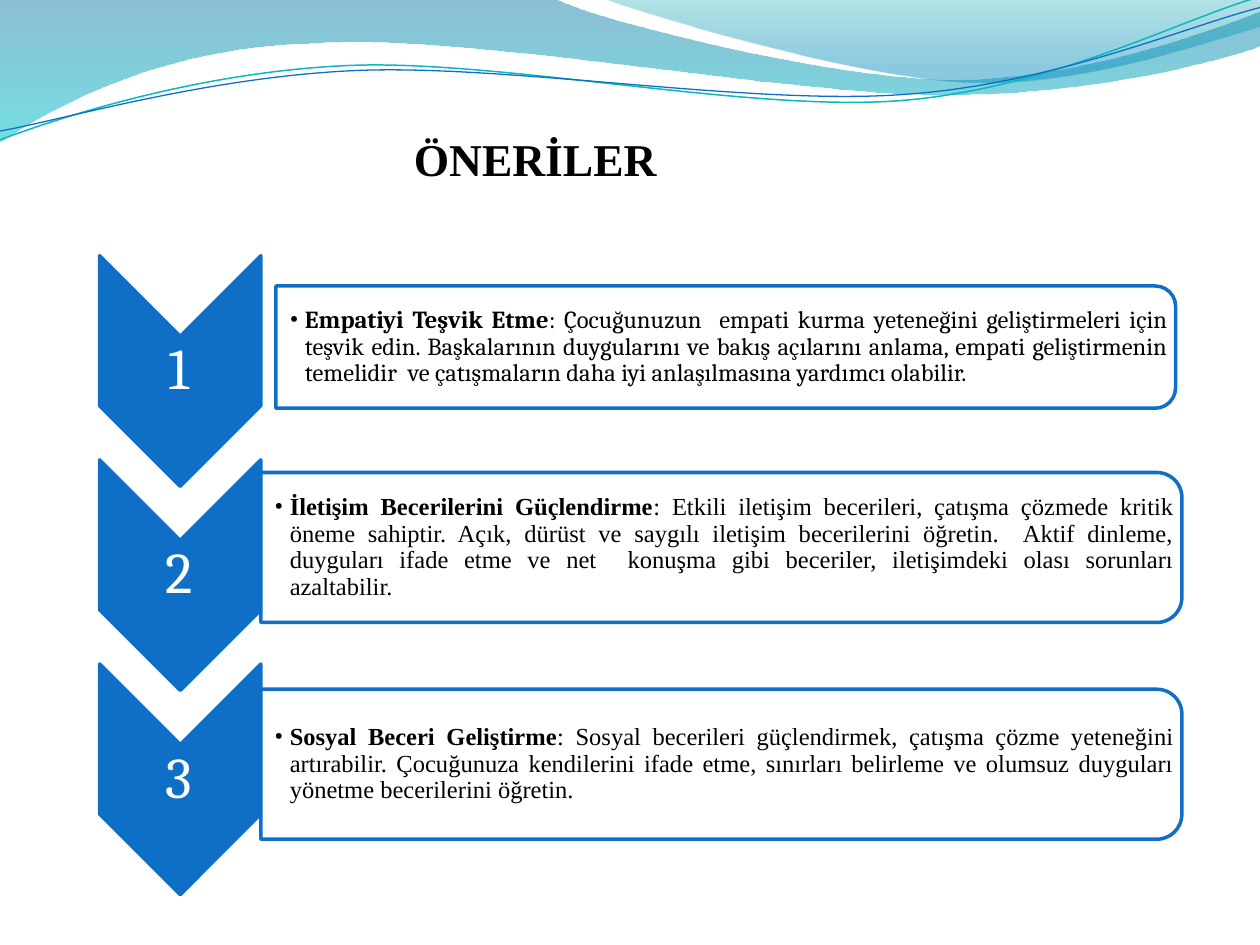
import math
from dataclasses import dataclass

from lxml import etree
from pptx import Presentation
from pptx.dml.color import RGBColor
from pptx.enum import shapes, text
from pptx.oxml.ns import qn
from pptx.util import Inches, Pt


@dataclass(frozen=True)
class Theme:
    blue: str = "0F6FC6"
    teal: str = "0AB8BF"
    white: str = "FFFFFF"
    black: str = "000000"
    serif: str = "Times New Roman"
    heading: str = "Cambria"
    title_size: float = 26
    number_size: float = 33
    body_size: float = 14
    outline: float = 2


THEME = Theme()
ROW_PITCH = 1.62
CURVE_TILT = 357.3

WAVE_BACK = [
    (0, 0), (4.4, -0.01),
    (4.76, 0.17, 6.64, 0.63, 7.58, 0.63),
    (8.53, 0.63, 9.58, 0.26, 10, 0.09), (10.01, 0.36),
    (9.83, 0.44, 8.7, 0.76, 7.46, 0.75),
    (6.22, 0.75, 3.82, 0.28, 2.57, 0.34),
    (1.29, 0.36, 0.46, 0.83, -0.01, 1.13), (0, 0),
]
WAVE_FRONT = [
    (4.79, -0.01),
    (5.09, 0.11, 6.82, 0.62, 7.69, 0.65),
    (8.56, 0.69, 9.61, 0.32, 10, 0.21), (10, 0), (4.79, -0.01),
]
TEAL_LINE = [
    (0, 1.11),
    (0.48, 0.93, 1.58, 0.57, 2.77, 0.52),
    (3.95, 0.47, 5.93, 0.89, 7.13, 0.8),
    (8.33, 0.71, 9.38, 0.15, 9.98, -0.02),
]
BLUE_LINE = [
    (0, 1.04),
    (0.47, 0.96, 1.64, 0.61, 2.83, 0.56),
    (4.03, 0.51, 5.97, 0.84, 7.17, 0.75),
    (8.36, 0.67, 9.41, 0.21, 10, 0.06),
]
ROWS = [
    ((2.19, 2.27, 7.14, 0.97), THEME.heading, "Empatiyi Teşvik Etme",
     ": Çocuğunuzun  empati kurma yeteneğini geliştirmeleri için teşvik edin. "
     "Başkalarının duygularını ve bakış açılarını anlama, empati geliştirmenin "
     "temelidir  ve çatışmaların daha iyi anlaşılmasına yardımcı olabilir."),
    ((2.07, 3.75, 7.31, 1.19), THEME.serif, "İletişim Becerilerini Güçlendirme",
     ": Etkili iletişim becerileri, çatışma çözmede kritik öneme sahiptir. "
     "Açık, dürüst ve saygılı iletişim becerilerini öğretin.  Aktif dinleme, "
     "duyguları ifade etme ve net  konuşma gibi beceriler, iletişimdeki olası "
     "sorunları azaltabilir."),
    ((2.07, 5.47, 7.31, 1.19), THEME.serif, "Sosyal Beceri Geliştirme",
     ": Sosyal becerileri güçlendirmek, çatışma çözme yeteneğini artırabilir. "
     "Çocuğunuza kendilerini ifade etme, sınırları belirleme ve olumsuz "
     "duyguları yönetme becerilerini öğretin."),
]


def rgb(value):
    return RGBColor.from_string(value)


def set_alpha(fill_element, percents):
    for color, percent in zip(fill_element.iter(qn("a:srgbClr")), percents):
        etree.SubElement(color, qn("a:alpha"), val=str(percent * 1000))


def turn(points, degrees, center):
    cx, cy = center
    cos, sin = math.cos(math.radians(degrees)), math.sin(math.radians(degrees))
    return [(cx + (x - cx) * cos - (y - cy) * sin,
             cy + (x - cx) * sin + (y - cy) * cos) for x, y in points]


def add_outline(s, segments, close, tilt=0, center=(0, 0)):
    curves = [[(Inches(x), Inches(y)) for x, y in
               turn(list(zip(seg[::2], seg[1::2])), -tilt, center)] for seg in segments]
    ends = [points[-1] for points in curves]
    builder = s.shapes.build_freeform(*ends[0])
    builder.add_line_segments(ends[1:], close=close)
    sp = builder.convert_to_shape()
    sp.shadow.inherit = False
    for line, points in zip(list(sp.element.iter(qn("a:lnTo"))), curves[1:]):
        if len(points) == 3:
            bezier = etree.Element(qn("a:cubicBezTo"))
            for x, y in points:
                etree.SubElement(bezier, qn("a:pt"), x=str(x - sp.left), y=str(y - sp.top))
            line.getparent().replace(line, bezier)
    sp.rotation = tilt
    return sp


def add_wave(s, segments, stops):
    sp = add_outline(s, segments, True)
    sp.line.fill.background()
    sp.fill.gradient()
    sp.fill.gradient_angle = 270
    for stop, (position, color, _) in zip(sp.fill.gradient_stops, stops):
        stop.position = position
        stop.color.rgb = rgb(color)
    set_alpha(sp.element.spPr.find(qn("a:gradFill")), [alpha for _, _, alpha in stops])


def add_curve(s, segments, center, color, width):
    sp = add_outline(s, segments, False, CURVE_TILT, center)
    sp.fill.background()
    sp.line.color.rgb = rgb(color)
    sp.line.width = Pt(width)


def add_turned_shape(s, kind, rect, fill):
    left, top, width, height = rect
    shift = (width - height) / 2
    sp = s.shapes.add_shape(kind, Inches(left + shift), Inches(top - shift),
                            Inches(height), Inches(width))
    sp.rotation = 90
    sp.shadow.inherit = False
    sp.fill.solid()
    sp.fill.fore_color.rgb = rgb(fill)
    sp.line.color.rgb = rgb(THEME.blue)
    sp.line.width = Pt(THEME.outline)
    return sp


def add_text(s, rect, runs, font, size, color, align, insets,
             anchor=text.MSO_ANCHOR.MIDDLE, spacing=0.9):
    tf = s.shapes.add_textbox(*map(Inches, rect)).text_frame
    tf.word_wrap = True
    tf.vertical_anchor = anchor
    tf.margin_left, tf.margin_top, tf.margin_right, tf.margin_bottom = map(Inches, insets)
    p = tf.paragraphs[0]
    p.alignment = align
    p.line_spacing = spacing
    p.font.name = font
    p.font.size = Pt(size)
    p.font.color.rgb = rgb(color)
    for content, bold in runs:
        r = p.add_run()
        r.text = content
        r.font.bold = bold
    return p


def add_bullet(p, font):
    p.level = 1
    pPr = p._p.get_or_add_pPr()
    pPr.set("marL", str(Inches(0.12)))
    pPr.set("indent", str(-Inches(0.12)))
    defaults = pPr.find(qn("a:defRPr"))
    defaults.addprevious(etree.Element(qn("a:buFont"), typeface=font))
    defaults.addprevious(etree.Element(qn("a:buChar"), char="•"))


def add_step(s, index, box, font, heading, body):
    drop = index * ROW_PITCH
    add_turned_shape(s, shapes.MSO_SHAPE.CHEVRON, (0.79, 2.03 + drop, 1.28, 1.83), THEME.blue)
    add_text(s, (0.78, 2.67 + drop, 1.28, 0.55), [(str(index + 1), False)],
             THEME.heading, THEME.number_size, THEME.white,
             text.PP_ALIGN.CENTER, [0.02] * 4)

    panel = add_turned_shape(s, shapes.MSO_SHAPE.ROUND_2_SAME_RECTANGLE, box, THEME.white)
    set_alpha(panel.element.spPr.find(qn("a:solidFill")), [90])
    left, top, width, height = box
    p = add_text(s, (left, top + 0.05, width - 0.05, height - 0.1),
                 [(heading, True), (body, False)], font, THEME.body_size, THEME.black,
                 text.PP_ALIGN.JUSTIFY, (0.11, 0.01, 0.01, 0.01))
    add_bullet(p, THEME.serif)


def main():
    prs = Presentation()
    prs.slide_width, prs.slide_height = Inches(10), Inches(7.5)
    s = prs.slides.add_slide(prs.slide_layouts[6])
    add_wave(s, WAVE_BACK, [(0, "0074A1", 45), (1, "00C6CF", 55)])
    add_wave(s, WAVE_FRONT, [(0, "00A1A9", 30), (0.8, "008BBF", 45)])
    add_curve(s, TEAL_LINE, (4.99, 0.58), THEME.teal, 0.85)
    add_curve(s, BLUE_LINE, (5, 0.59), THEME.blue, 0.75)
    add_text(s, (0.5, 0.94, 9, 5.98), [("ÖNERİLER", True)], THEME.serif,
             THEME.title_size, THEME.black, text.PP_ALIGN.CENTER,
             (0.1, 0.1, 1.6, 0.05), text.MSO_ANCHOR.TOP, 1.0)
    for index, row in enumerate(ROWS):
        add_step(s, index, *row)
    prs.save("out.pptx")


if __name__ == "__main__":
    main()
